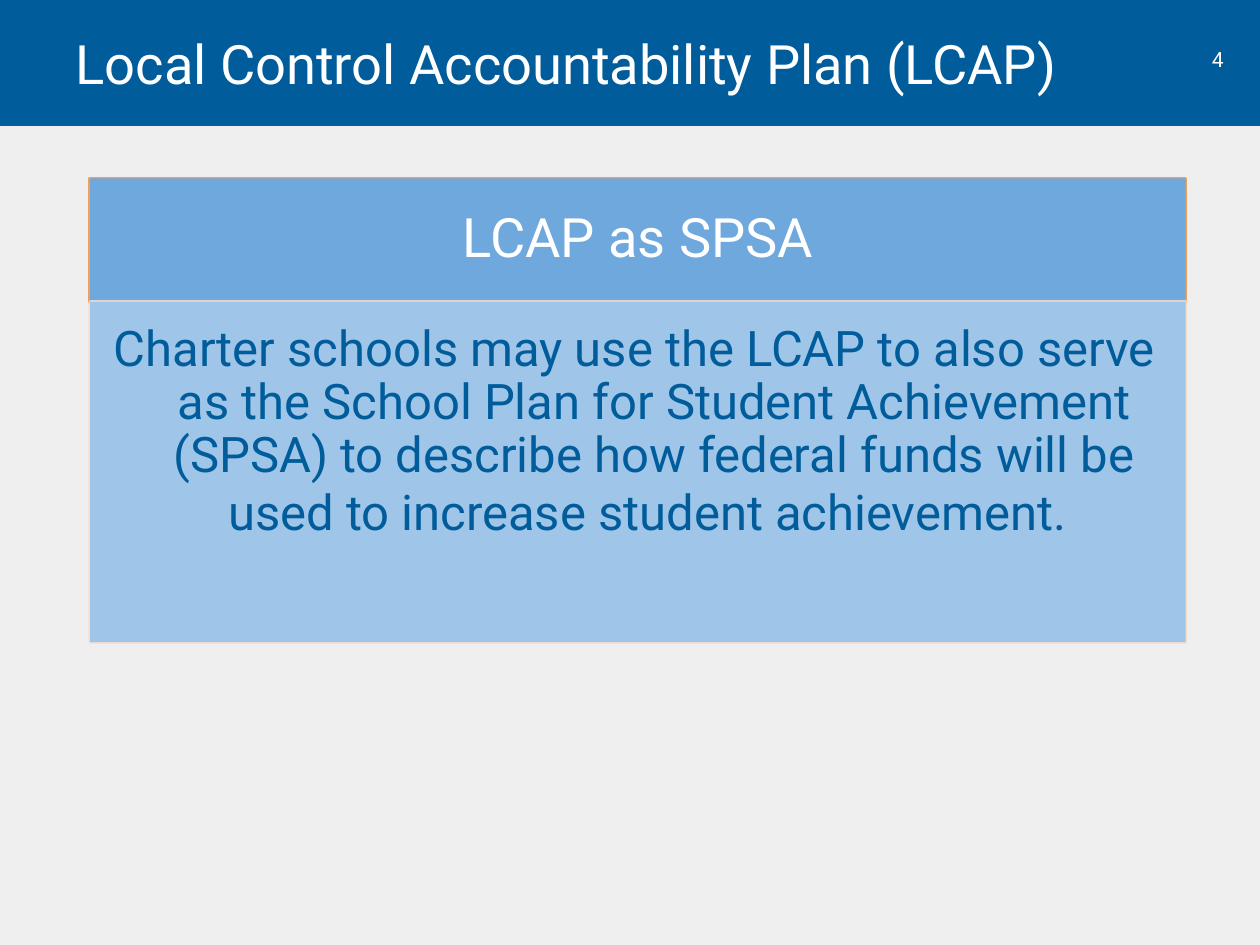
from dataclasses import dataclass

from lxml import etree
from pptx import Presentation
from pptx.dml.color import RGBColor
from pptx.enum import shapes, text
from pptx.oxml.ns import qn
from pptx.util import Pt


@dataclass(frozen=True)
class Theme:
    font: str = "Roboto"
    page: str = "EFEFEF"
    navy: str = "005C9A"
    white: str = "FFFFFF"
    header: str = "6FA8DC"
    body: str = "9FC5E8"
    orange: str = "EEA05A"
    peach: str = "F8DCCD"
    heading_size: float = 31
    body_size: float = 28
    number_size: float = 12
    frame_width: float = 2


def rgb(value):
    return RGBColor.from_string(value)


class Deck:
    def __init__(self, theme, width, height):
        self.theme = theme
        self.prs = Presentation()
        self.prs.slide_width, self.prs.slide_height = Pt(width), Pt(height)

    def new_slide(self):
        self.s = self.prs.slides.add_slide(self.prs.slide_layouts[5])
        fill = self.s.background.fill
        fill.solid()
        fill.fore_color.rgb = rgb(self.theme.page)

    def rect(self, box, color, line=None, opacity=100):
        sp = self.s.shapes.add_shape(shapes.MSO_SHAPE.RECTANGLE, *map(Pt, box))
        sp.shadow.inherit = False
        sp.fill.solid()
        sp.fill.fore_color.rgb = rgb(color)
        if line:
            sp.line.color.rgb = rgb(line)
            sp.line.width = Pt(self.theme.frame_width)
        else:
            sp.line.fill.background()
        if opacity < 100:
            for clr in sp.element.iter(qn("a:srgbClr")):
                etree.SubElement(clr, qn("a:alpha"), val=str(opacity * 1000))
        return sp

    def add_text(self, sp, runs, color, align, insets=(7.2, 3.6, 7.2, 3.6),
                 anchor=text.MSO_ANCHOR.TOP, spacing=None):
        """Fill a shape with one paragraph; runs are (wording, size) pairs."""
        tf = sp.text_frame
        tf.word_wrap = True
        tf.vertical_anchor = anchor
        tf.margin_left, tf.margin_top, tf.margin_right, tf.margin_bottom = map(Pt, insets)
        p = tf.paragraphs[0]
        p.alignment = align
        if spacing:
            p.line_spacing = spacing
        for wording, size in runs:
            r = p.add_run()
            r.text = wording
            r.font.name = self.theme.font
            r.font.size = Pt(size)
            r.font.color.rgb = rgb(color)
        return p

    def hang(self, sp, indent):
        """Give every paragraph of a shape a hanging indent."""
        for pPr in sp.element.iter(qn("a:pPr")):
            pPr.set("marL", str(Pt(indent)))
            pPr.set("indent", str(Pt(-indent)))

    def title(self, box, wording):
        sp = self.s.shapes.title
        sp.left, sp.top, sp.width, sp.height = map(Pt, box)
        self.s.shapes.element.append(sp.element)  # in front of the banner
        self.add_text(sp, [(wording, self.theme.heading_size)], self.theme.white,
                      text.PP_ALIGN.LEFT, anchor=text.MSO_ANCHOR.MIDDLE)

    def slide_number(self, box, number):
        sp = self.s.shapes.add_textbox(*map(Pt, box))
        self.add_text(sp, [(number, self.theme.number_size)], self.theme.white,
                      text.PP_ALIGN.CENTER)
        sp.text_frame.auto_size = text.MSO_AUTO_SIZE.SHAPE_TO_FIT_TEXT

    def panel(self, box, color, frame, opacity=100):
        """Draw a filled face over an outlined frame and return the face."""
        self.rect(box, frame, line=frame, opacity=opacity)
        return self.rect(box, color)


def main():
    t = Theme()
    deck = Deck(t, 720, 540)
    deck.new_slide()

    banner_height = 72
    deck.rect((0, 0, 720, banner_height), t.navy)
    deck.slide_number((679.7, 23, 32.4, 21.6), "4")

    left, top, width = 51.6, 102, 626
    header_height, body_height = 70.5, 194.5
    header = deck.panel((left, top, width, header_height), t.header, t.orange)
    deck.add_text(header, [("LCAP as SPSA", t.heading_size)], t.white,
                  text.PP_ALIGN.CENTER, (17.3, 10, 17.3, 10),
                  text.MSO_ANCHOR.MIDDLE, spacing=0.9)

    body = deck.panel((left, top + header_height, width, body_height),
                      t.body, t.peach, opacity=86)
    p = deck.add_text(body, [
        ("Charter schools may use the LCAP to also serve as the School Plan for "
         "Student Achievement (SPSA) to describe how federal funds will be used "
         "to increase student achievement.", t.body_size),
        (" ", t.heading_size),
    ], t.navy, text.PP_ALIGN.CENTER, (13, 13, 17.3, 19.5), spacing=0.9)
    p.level = 1
    deck.hang(body, 22.5)

    deck.title((36, 0, 641.5, banner_height), "Local Control Accountability Plan (LCAP)")
    deck.prs.save("out.pptx")


if __name__ == "__main__":
    main()
